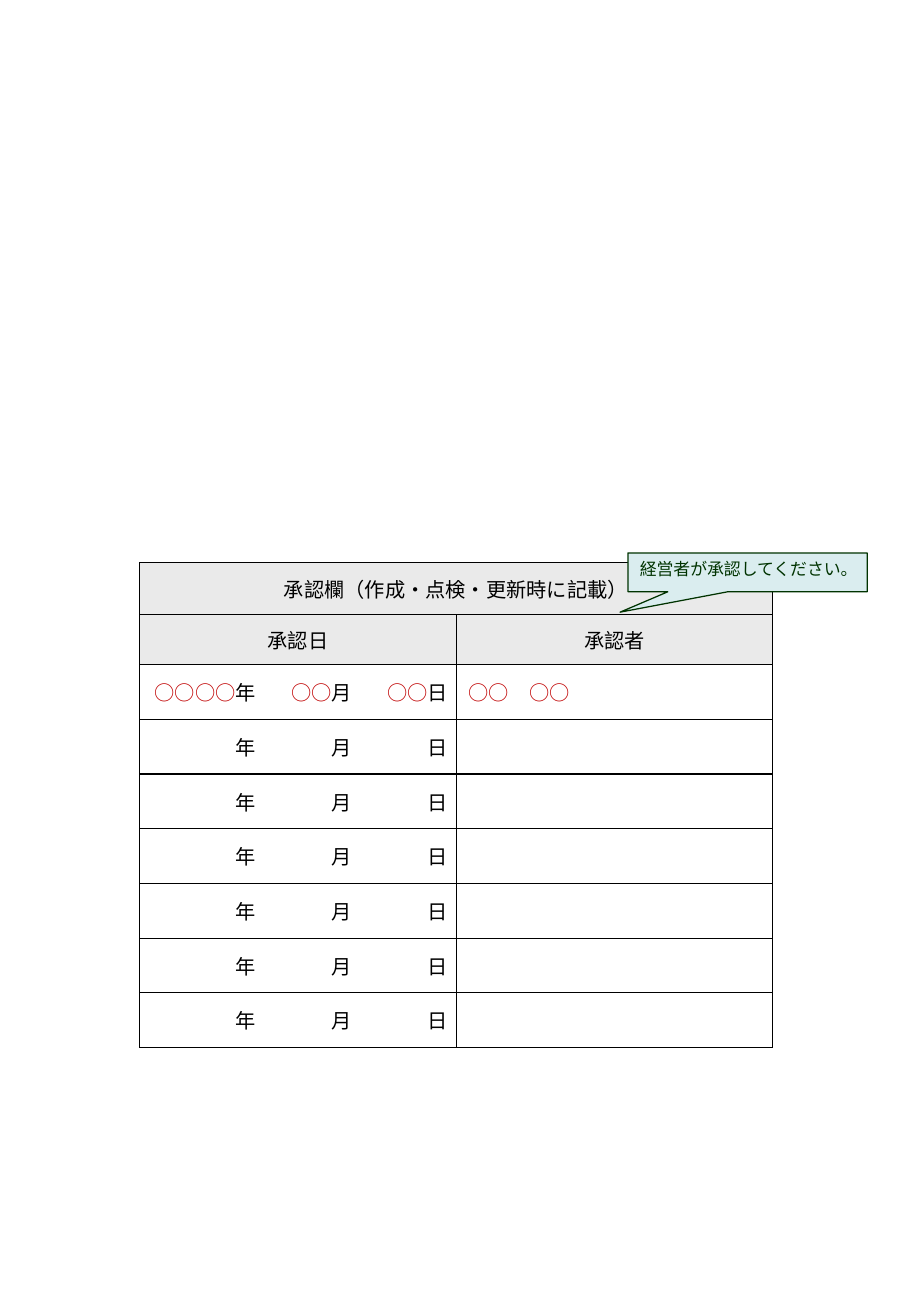
from lxml import etree
from pptx import Presentation
from pptx.dml.color import RGBColor
from pptx.enum.shapes import MSO_SHAPE
from pptx.enum.text import MSO_ANCHOR, PP_ALIGN
from pptx.oxml.ns import qn
from pptx.util import Inches, Pt

CALLOUT = MSO_SHAPE.RECTANGULAR_CALLOUT
MIDDLE, TOP = MSO_ANCHOR.MIDDLE, MSO_ANCHOR.TOP
LEFT, CENTER, RIGHT = PP_ALIGN.LEFT, PP_ALIGN.CENTER, PP_ALIGN.RIGHT
BLACK = RGBColor(0x00, 0x00, 0x00)
WHITE = RGBColor(0xFF, 0xFF, 0xFF)
GRAY = RGBColor(0xEA, 0xEA, 0xEA)
RED = RGBColor(0xC0, 0x00, 0x00)
GREEN = RGBColor(0x00, 0x33, 0x00)
AQUA = RGBColor(0xDA, 0xED, 0xEF)
SANS, LATIN = "Noto Sans CJK JP", "Arial"

HEADS = [
    ["承認欄（作成・点検・更新時に記載）", "", "", "", "", "", ""],
    ["承認日", "", "", "", "", "", "承認者"],
]
SAMPLE = ["○○○○", "年", "○○", "月", "○○", "日", "○○　○○"]
BLANK = ["", "年", "", "月", "", "日", ""]
ROWS = HEADS + [SAMPLE] + [BLANK] * 6
WIDTHS = [0.79, 0.2, 0.59, 0.2, 0.59, 0.2, 2.6]
HEIGHTS = [0.43, 0.41] + [0.45] * 7
DAY, NAME = 5, 6
NOTE = "経営者が承認してください。"


def write(frame, text, size, font, color, align, gap):
    """Put one formatted line of text in a frame."""
    frame.text = text
    line = frame.paragraphs[0]
    line.alignment = align
    line.space_before = Pt(gap)
    for run in line.runs:
        run.font.size = Pt(size)
        run.font.name = font
        run.font.color.rgb = color
        east = etree.SubElement(run.font._element, qn("a:ea"))
        east.set("typeface", SANS)


def border(cell, sides):
    """Draw the named sides of a cell and clear the others."""
    props = cell._tc.get_or_add_tcPr()
    for side in "LRTB":
        line = etree.SubElement(props, qn("a:ln" + side), w=str(Pt(0.75)))
        if side in sides:
            fill = etree.SubElement(line, qn("a:solidFill"))
            etree.SubElement(fill, qn("a:srgbClr"), val=str(BLACK))
        else:
            etree.SubElement(line, qn("a:noFill"))


def add_grid(slide):
    """Add the approval table."""
    frame = slide.shapes.add_table(
        len(ROWS), len(WIDTHS), Inches(1.15), Inches(4.63),
        Inches(sum(WIDTHS)), Inches(sum(HEIGHTS)))
    table = frame.table
    for col, width in zip(table.columns, WIDTHS):
        col.width = Inches(width)
    for row, height in zip(table.rows, HEIGHTS):
        row.height = Inches(height)
    table.cell(0, 0).merge(table.cell(0, NAME))
    table.cell(1, 0).merge(table.cell(1, DAY))
    for r, row in enumerate(ROWS):
        head = r < len(HEADS)
        for c, text in enumerate(row):
            cell = table.cell(r, c)
            sides = "TB"
            if head or c in (0, NAME):
                sides += "L"
            if head or c in (DAY, NAME):
                sides += "R"
            border(cell, sides)
            cell.fill.solid()
            cell.fill.fore_color.rgb = GRAY if head else WHITE
            cell.vertical_anchor = MIDDLE
            align = CENTER if head else LEFT
            if not head and c <= DAY:
                cell.margin_left = cell.margin_right = 0
                align = LEFT if c % 2 else RIGHT
            color = RED if "○" in text else BLACK
            write(cell.text_frame, text, 12, SANS, color, align, 2.4)


def add_note(slide):
    """Add the callout that points at the table."""
    note = slide.shapes.add_shape(
        CALLOUT, Inches(5.17), Inches(4.55), Inches(1.97), Inches(0.32))
    note.adjustments[0], note.adjustments[1] = -0.533, 1.024
    note.shadow.inherit = False
    note.fill.solid()
    note.fill.fore_color.rgb = AQUA
    note.line.color.rgb = GREEN
    note.line.width = Pt(0.75)
    frame = note.text_frame
    frame.word_wrap = True
    frame.vertical_anchor = TOP
    write(frame, NOTE, 10, LATIN, GREEN, LEFT, 1)


def main():
    """Build the approval form slide."""
    deck = Presentation()
    deck.slide_width, deck.slide_height = Inches(7.5), Inches(10.83)
    slide = deck.slides.add_slide(deck.slide_layouts[6])
    add_grid(slide)
    add_note(slide)
    deck.save("out.pptx")


if __name__ == "__main__":
    main()
